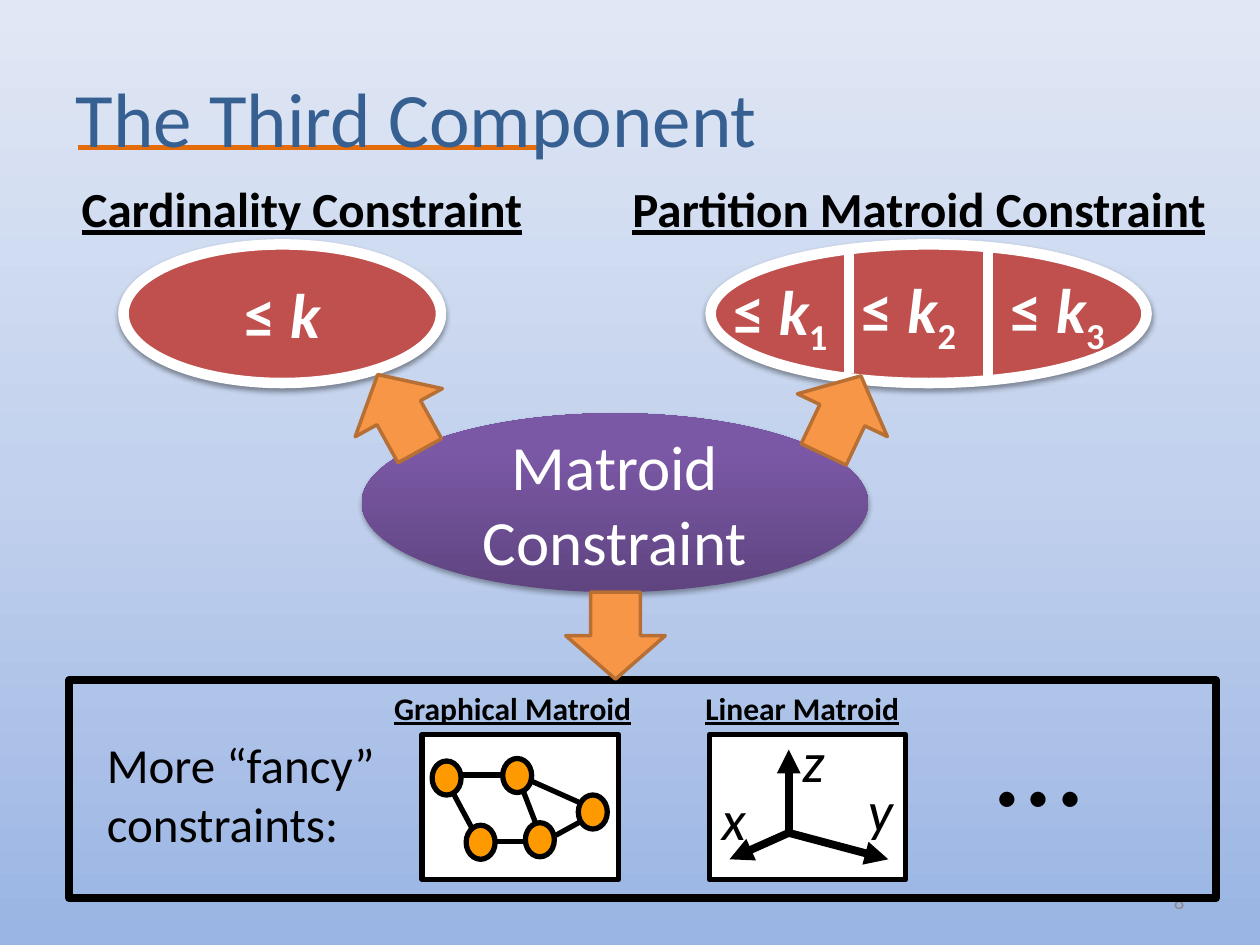
from copy import deepcopy

from lxml import etree
from pptx import Presentation
from pptx.dml.color import RGBColor
from pptx.enum.shapes import MSO_CONNECTOR, MSO_SHAPE
from pptx.enum.text import MSO_ANCHOR, PP_ALIGN
from pptx.oxml.ns import qn
from pptx.util import Inches, Pt

LINE = MSO_CONNECTOR.STRAIGHT
OVAL, RECTANGLE, ARROW = MSO_SHAPE.OVAL, MSO_SHAPE.RECTANGLE, MSO_SHAPE.RIGHT_ARROW
MIDDLE, TOP = MSO_ANCHOR.MIDDLE, MSO_ANCHOR.TOP
LEFT, CENTER, RIGHT = PP_ALIGN.LEFT, PP_ALIGN.CENTER, PP_ALIGN.RIGHT
BLACK, WHITE, RED, ORANGE = "000000", "FFFFFF", "C0504D", "F79646"


def color(value):
    """Turn a hex string into a colour."""
    return RGBColor.from_string(value)


def set_gradient(fill, element, stops):
    """Fill upwards with (percent, colour) stops."""
    fill.gradient()
    fill.gradient_angle = 90
    stop_list = next(element.iter(qn("a:gsLst")))
    stop_list.insert(1, deepcopy(stop_list[0]))
    for stop, (position, value) in zip(fill.gradient_stops, stops):
        stop.position = position / 100
        stop.color.rgb = color(value)


def add_shadow(shape, opacity, distance):
    """Give a shape a soft shadow below it."""
    effects = shape._element.spPr.find(qn("a:effectLst"))
    shadow = etree.SubElement(effects, qn("a:outerShdw"), blurRad=str(Pt(3.1)),
                              dist=str(Pt(distance)), dir="5400000", rotWithShape="0")
    black = etree.SubElement(shadow, qn("a:srgbClr"), val=BLACK)
    etree.SubElement(black, qn("a:alpha"), val=str(opacity * 1000))


def add_run(paragraph, text, size, value, bold=False, italic=False, underline=False, baseline=0):
    """Add one formatted run."""
    run = paragraph.add_run()
    run.text = text
    font = run.font
    font.name, font.size, font.color.rgb = "Calibri", Pt(size), color(value)
    font.bold, font.italic, font.underline = bold, italic, underline
    if baseline:
        font._element.set("baseline", str(baseline * 1000))


def add_text(slide, box, wrap=False, align=LEFT, anchor=TOP):
    """Add a text box and return its paragraph."""
    frame = slide.shapes.add_textbox(*map(Inches, box)).text_frame
    frame.word_wrap, frame.vertical_anchor = wrap, anchor
    paragraph = frame.paragraphs[0]
    paragraph.alignment = align
    return paragraph


def add_shape(slide, kind, box, fill=None, line=None, width=0):
    """Add a preset shape with a flat fill and outline."""
    shape = slide.shapes.add_shape(kind, *map(Inches, box))
    shape.shadow.inherit = False
    if fill:
        shape.fill.solid()
        shape.fill.fore_color.rgb = color(fill)
    else:
        shape.fill.background()
    if line:
        shape.line.color.rgb, shape.line.width = color(line), Pt(width)
    else:
        shape.line.fill.background()
    return shape


def add_line(slide, start, end, value, width, arrow=False):
    """Add a straight line, with an arrowhead at its end if asked."""
    line = slide.shapes.add_connector(LINE, *map(Inches, (*start, *end)))
    line.line.color.rgb, line.line.width = color(value), Pt(width)
    properties = line._element.spPr
    if arrow:
        etree.SubElement(properties.find(qn("a:ln")), qn("a:tailEnd"), type="triangle")
    etree.SubElement(properties, qn("a:effectLst"))
    return line


def add_block_arrow(slide, left, top, rotation):
    """Add an orange block arrow."""
    add_shape(slide, ARROW, (left, top, 0.69, 0.79), ORANGE, "B76F34", 2).rotation = rotation


def add_limit(paragraph, index=""):
    """Write the bound on k, with an optional index."""
    add_run(paragraph, "≤ ", 36, WHITE, bold=True)
    add_run(paragraph, "k", 36, WHITE, bold=True, italic=True)
    if index:
        add_run(paragraph, index, 36, WHITE, bold=True, baseline=-25)


def add_title(slide, box):
    """Place the title over its accent line."""
    left, top, width, height = box
    title = slide.shapes.title
    title.left, title.top, title.width, title.height = map(Inches, box)
    title.text_frame.vertical_anchor = MIDDLE
    paragraph = title.text_frame.paragraphs[0]
    paragraph.alignment = LEFT
    add_run(paragraph, "The Third Component", 44, "376092")
    line = add_line(slide, (left + 0.12, top + 0.87), (left + 3.8, top + 0.87), "E46C0A", 3)
    title.element.addprevious(line.element)


def add_matroid(slide, box):
    """Draw the central purple ellipse."""
    ellipse = add_shape(slide, OVAL, box)
    set_gradient(ellipse.fill, ellipse.element, [(0, "5F4480"), (80, "7B58A6"), (100, "7C57A8")])
    add_shadow(ellipse, 35, 1.8)
    ellipse.text_frame.vertical_anchor = MIDDLE
    paragraph = ellipse.text_frame.paragraphs[0]
    paragraph.alignment = CENTER
    add_run(paragraph, "Matroid Constraint", 36, WHITE)


def add_constraint(slide, box, heading, heading_box):
    """Draw a red constraint ellipse under its heading."""
    ellipse = add_shape(slide, OVAL, box, RED, WHITE, 6)
    add_shadow(ellipse, 38, 1.6)
    add_run(add_text(slide, heading_box), heading, 28, BLACK, bold=True, underline=True)
    return ellipse


def add_cardinality(slide, box):
    """Draw the single-bound constraint."""
    left, top = box[:2]
    ellipse = add_constraint(slide, box, "Cardinality Constraint",
                             (left - 0.43, top - 0.57, 3.74, 0.57))
    ellipse.text_frame.vertical_anchor = MIDDLE
    paragraph = ellipse.text_frame.paragraphs[0]
    paragraph.alignment = CENTER
    add_limit(paragraph)


def add_partition(slide, box):
    """Draw the constraint split into three bounded parts."""
    left, top, width, height = box
    add_constraint(slide, box, "Partition Matroid Constraint",
                   (left - 0.72, top - 0.57, 4.81, 0.57))
    for x, inset in ((1.1, 0.08), (2.2, 0)):
        add_line(slide, (left + x, top + inset), (left + x, top + height - inset), WHITE, 6)
    for index, (x, y) in enumerate([(0.08, 0.17), (1.1, 0.16), (2.28, 0.16)], 1):
        add_limit(add_text(slide, (left + x, top + y, 1, 0.71)), str(index))


def add_graph(slide, box):
    """Draw the framed graph of five nodes."""
    left, top = box[:2]
    add_shape(slide, RECTANGLE, box, WHITE, BLACK, 3)
    for x, y in [(0.08, 0.21), (0.35, 0.72), (0.64, 0.19), (1.24, 0.48), (0.82, 0.7)]:
        add_shape(slide, OVAL, (left + x, top + y, 0.23, 0.27), "FF9900", BLACK, 3)
    edges = [(0.25, 0.47, 0.4, 0.75), (0.59, 0.85, 0.82, 0.85), (1.06, 0.8, 1.26, 0.69),
             (0.8, 0.44, 0.9, 0.7), (0.87, 0.37, 1.25, 0.54), (0.31, 0.32, 0.64, 0.32)]
    for x1, y1, x2, y2 in edges:
        add_line(slide, (left + x1, top + y1), (left + x2, top + y2), BLACK, 3)


def add_axes(slide, box):
    """Draw the framed x, y and z axes."""
    left, top = box[:2]
    add_shape(slide, RECTANGLE, box, WHITE, BLACK, 3)
    for x, y in [(0.16, 0.99), (1.42, 0.99), (0.63, 0.12)]:
        add_line(slide, (left + 0.63, top + 0.78), (left + x, top + y), BLACK, 4.5, arrow=True)
    for name, x, y in [("x", 0, 0.35), ("y", 1.16, 0.28), ("z", 0.64, -0.11)]:
        add_run(add_text(slide, (left + x, top + y, 0.4, 0.64)), name, 32, BLACK, italic=True)


def add_examples(slide, box):
    """Draw the framed row of further constraints."""
    left, top, width, height = box
    add_shape(slide, RECTANGLE, box, line=BLACK, width=4.5)
    label = add_text(slide, (left + 0.2, top + 0.38, 2.44, 1.04), wrap=True)
    add_run(label, "More “fancy” constraints:", 28, BLACK)
    for heading, x, heading_width in [("Graphical Matroid", 2.48, 2.1), ("Linear Matroid", 4.95, 1.75)]:
        paragraph = add_text(slide, (left + x, top + 0.02, heading_width, 0.4))
        add_run(paragraph, heading, 18, BLACK, bold=True, underline=True)
    add_run(add_text(slide, (left + 7.25, top - 0.05, 0.9, 1.31)), "…", 72, BLACK)
    add_graph(slide, (left + 2.8, top + 0.43, 1.56, 1.15))
    add_axes(slide, (left + 5.08, top + 0.43, 1.56, 1.15))


def main():
    """Build and save the slide."""
    presentation = Presentation()
    presentation.slide_width, presentation.slide_height = Inches(10), Inches(7.5)
    slide = presentation.slides.add_slide(presentation.slide_layouts[5])
    set_gradient(slide.background.fill, slide.element,
                 [(0, "9AB5E4"), (50, "C2D1ED"), (100, "E1E8F5")])
    add_title(slide, (0.5, 0.3, 9, 1.25))
    number = add_text(slide, (7.17, 6.95, 2.33, 0.4), True, RIGHT, MIDDLE)
    add_run(number, "8", 12, "8C8C8C")
    add_matroid(slide, (2.87, 3.28, 4.02, 1.42))
    add_cardinality(slide, (0.98, 1.94, 2.52, 1.1))
    add_partition(slide, (5.64, 1.94, 3.46, 1.1))
    add_examples(slide, (0.55, 5.4, 9.1, 1.73))
    for left, top, rotation in [(6.34, 2.9, 295.4), (4.54, 4.65, 90), (2.82, 2.88, 241.1)]:
        add_block_arrow(slide, left, top, rotation)
    presentation.save("out.pptx")


if __name__ == "__main__":
    main()
